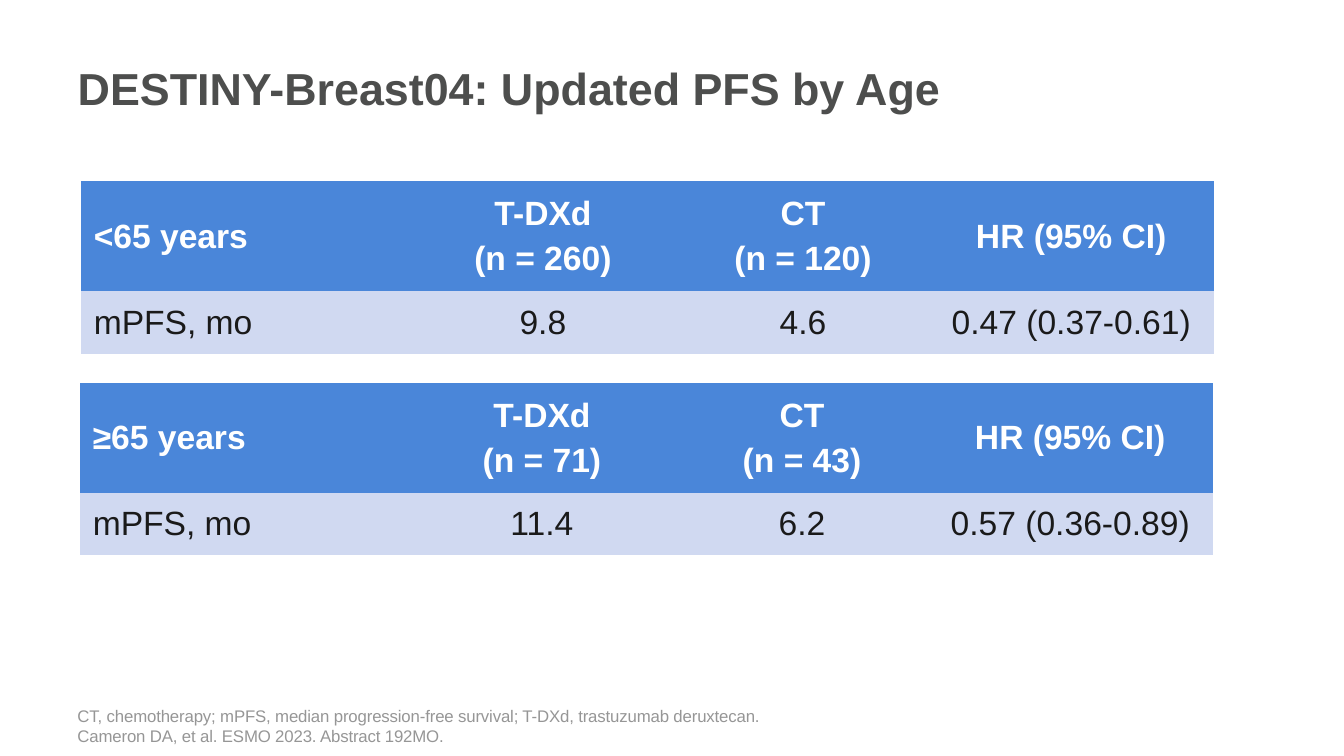
import pptx
import pptx.dml.color
import pptx.enum.text
import pptx.oxml.ns
import pptx.util
from pptx.util import Inches

FONT = "Arial"
COLUMN_WIDTHS = (3.25, 2.67, 2.49, 2.83)
ROW_HEIGHTS = (1.09, 0.62)
NO_STYLE = "{2D5ABB26-0587-4C30-8999-92F81FD0307C}"
LEFT = pptx.enum.text.PP_ALIGN.LEFT
CENTER = pptx.enum.text.PP_ALIGN.CENTER
TOP = pptx.enum.text.MSO_ANCHOR.TOP
MIDDLE = pptx.enum.text.MSO_ANCHOR.MIDDLE


def color(hex_string):
    """Turn a hex string into an RGB colour."""
    return pptx.dml.color.RGBColor.from_string(hex_string)


def write_text(frame, lines, size, fill, bold=False, align=LEFT, anchor=TOP,
               space_after=0, spacing=None):
    """Write one formatted paragraph per line into a text frame."""
    frame.word_wrap = True
    frame.vertical_anchor = anchor
    for index, line in enumerate(lines):
        paragraph = frame.add_paragraph() if index else frame.paragraphs[0]
        paragraph.alignment = align
        paragraph.space_before = pptx.util.Pt(0)
        paragraph.space_after = pptx.util.Pt(space_after)
        paragraph.line_spacing = 1.0
        run = paragraph.add_run()
        run.text = line
        run.font.name = FONT
        run.font.size = pptx.util.Pt(size)
        run.font.bold = bold
        run.font.color.rgb = color(fill)
        if spacing is not None:
            run.font._element.set("spc", str(spacing))


def add_title(slide, text):
    """Place and fill the title placeholder."""
    title = slide.shapes.title
    title.left, title.top = Inches(0.67), Inches(0.22)
    title.width, title.height = Inches(11.75), Inches(1.3)
    write_text(title.text_frame, [text], size=32, fill="4D4E4D", bold=True,
               anchor=MIDDLE)


def fill_cell(cell, lines, is_header, is_label):
    """Fill and write one table cell."""
    cell.fill.solid()
    cell.fill.fore_color.rgb = color("4A86D9" if is_header else "D0D9F1")
    cell.margin_left = cell.margin_right = Inches(0.13)
    cell.margin_top = cell.margin_bottom = Inches(0.05)
    cell.vertical_anchor = MIDDLE
    write_text(cell.text_frame, lines, size=24,
               fill="FFFFFF" if is_header else "1A1A1A", bold=is_header,
               align=LEFT if is_label else CENTER, anchor=None,
               space_after=5.5)


def add_survival_table(slide, left, top, age, patients, results):
    """Add the survival table of one age group."""
    rows = [
        [[age], ["T-DXd", f"(n = {patients[0]})"],
         ["CT", f"(n = {patients[1]})"], ["HR (95% CI)"]],
        [["mPFS, mo"]] + [[result] for result in results],
    ]
    table = slide.shapes.add_table(
        len(ROW_HEIGHTS), len(COLUMN_WIDTHS), Inches(left), Inches(top),
        Inches(sum(COLUMN_WIDTHS)), Inches(sum(ROW_HEIGHTS))).table
    table.horz_banding = False
    style = table._tbl.tblPr.find(pptx.oxml.ns.qn("a:tableStyleId"))
    style.text = NO_STYLE
    for column, width in zip(table.columns, COLUMN_WIDTHS):
        column.width = Inches(width)
    for row, height in zip(table.rows, ROW_HEIGHTS):
        row.height = Inches(height)
    for row_index, row in enumerate(rows):
        for column_index, lines in enumerate(row):
            fill_cell(table.cell(row_index, column_index), lines,
                      is_header=row_index == 0, is_label=column_index == 0)


def add_footnote(slide, lines):
    """Add the abbreviations and the citation at the foot."""
    box = slide.shapes.add_textbox(Inches(0.67), Inches(6.95),
                                   Inches(11.75), Inches(0.48))
    write_text(box.text_frame, lines, size=12, fill="969696", spacing=-10)


def main():
    """Build and save the slide."""
    presentation = pptx.Presentation()
    presentation.slide_width = Inches(13.33)
    presentation.slide_height = Inches(7.5)
    slide = presentation.slides.add_slide(presentation.slide_layouts[5])
    add_title(slide, "DESTINY-Breast04: Updated PFS by Age")
    add_survival_table(slide, 0.8, 1.8, "<65 years", (260, 120),
                       ("9.8", "4.6", "0.47 (0.37-0.61)"))
    add_survival_table(slide, 0.79, 3.8, "≥65 years", (71, 43),
                       ("11.4", "6.2", "0.57 (0.36-0.89)"))
    add_footnote(slide, [
        "CT, chemotherapy; mPFS, median progression-free survival; "
        "T-DXd, trastuzumab deruxtecan.",
        "Cameron DA, et al. ESMO 2023. Abstract 192MO.",
    ])
    presentation.save("out.pptx")


if __name__ == "__main__":
    main()
